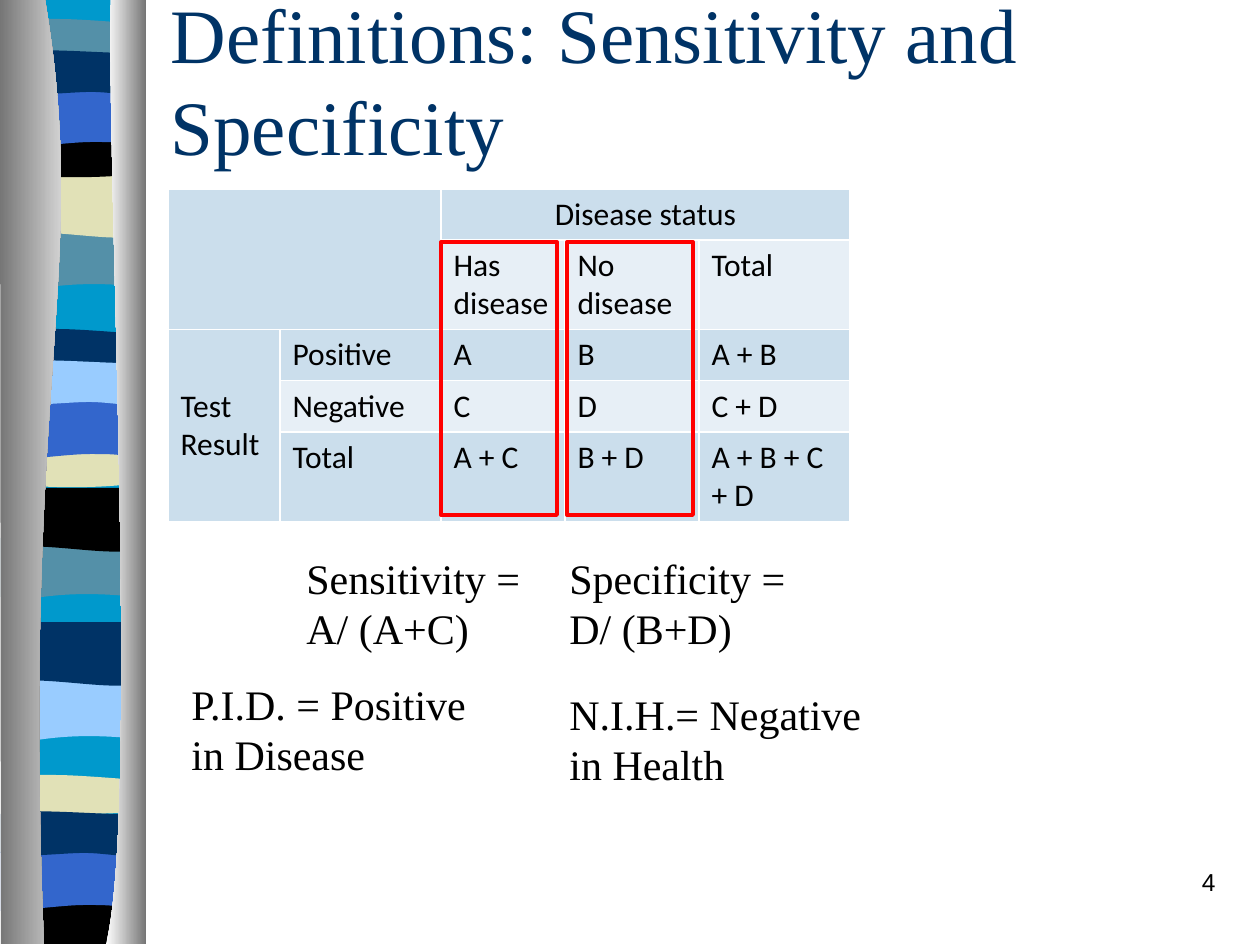
from lxml import etree
from pptx import Presentation
from pptx.dml.color import RGBColor
from pptx.enum.shapes import MSO_SHAPE
from pptx.enum.text import MSO_ANCHOR, MSO_AUTO_SIZE, PP_ALIGN
from pptx.oxml.ns import qn
from pptx.util import Pt

RECT = MSO_SHAPE.RECTANGLE
MIDDLE = MSO_ANCHOR.MIDDLE
LEFT, CENTER, RIGHT = PP_ALIGN.LEFT, PP_ALIGN.CENTER, PP_ALIGN.RIGHT
PX = 914400 / 126
SERIF = "Times New Roman"


def px(*sizes):
    return [round(size * PX) for size in sizes]


def style(para, size, face, color="000000", align=LEFT):
    para.font.size = Pt(size)
    para.font.name = face
    para.font.color.rgb = RGBColor.from_string(color)
    para.alignment = align


prs = Presentation()
prs.slide_width, prs.slide_height = px(1260, 945)
slide = prs.slides.add_slide(prs.slide_layouts[5])
shapes = slide.shapes

# Wave outlines: pairs are straight steps, sixes are Bezier curves.
rise = [(136, 0), (136, 59), (42, 49, 23, 69, 0, 59), (0, 0)]
dip = [(136, 0), (136, 60), (113, 71, 42, 53, 0, 60), (0, 0)]
thin = [(136, 0), (136, 31), (113, 35, 23, 35, 0, 31), (0, 0),
        (9, -6, 29, -5, 52, -5), (74, -5, 118, -1, 136, 0)]
bowl = [(136, 0), (136, 41), (113, 48, 23, 48, 0, 41), (0, 0),
        (83, 6, 107, 0, 136, 0)]
arch = [(136, 0), (136, 59), (116, 53, 107, 53, 84, 53),
        (62, 53, 21, 59, 0, 59), (0, 0)]
roll = [(136, 0), (136, 39), (127, 45, 106, 39, 83, 39),
        (60, 39, 14, 45, 0, 39), (0, 0), (19, -6, 92, 0, 115, 0),
        (138, 0, 133, 0, 136, 0)]
floor = [(136, 0), (136, 47), (1, 47), (0, 0), (83, 6, 107, 0, 136, 0)]
base = [(136, 0), (136, 943), (0, 943), (0, 0)]
drape = [(45, 0), (91, 273, 21, 374, 44, 945), (1, 945), (0, 0)]
fold = [(111, 0), (106, 158, 140, 814, 106, 945), (146, 945), (146, 1)]

# Outline, left, top, one fill colour or two gradient colours
bands = [
    (base, 8, -4, "0099CC"),
    (rise, 8, 228, "5490A8"), (dip, 8, 174, "E1E1B7"),
    (thin, 8, 24, "5490A8"), (bowl, 8, 131, "000000"),
    (arch, 8, 89, "3366CC"), (roll, 8, 53, "003366"),
    (rise, 1, 538, "5490A8"), (dip, 4, 488, "000000"),
    (thin, 6, 334, "003366"), (bowl, 4, 441, "E1E1B7"),
    (arch, 6, 401, "3366CC"), (roll, 6, 363, "99CCFF"),
    (rise, 3, 680, "99CCFF"), (dip, 5, 622, "003366"),
    (thin, 4, 780, "E1E1B7"), (floor, 4, 897, "000000"),
    (arch, 1, 852, "3366CC"), (roll, 1, 814, "003366"),
    (drape, 0, -1, "767676", "FFFFFF"),
    (fold, 0, -1, "FFFFFF", "767676"),
]
for outline, left, top, *colors in bands:
    points = [px(left + step[i], top + step[i + 1])
              for step in outline for i in range(0, len(step), 2)]
    pen = shapes.build_freeform(*points[0], scale=1.0)
    pen.add_line_segments(points[1:], close=True)
    band = pen.convert_to_shape()
    lines = band._element.findall(".//" + qn("a:lnTo"))
    for step in outline[1:]:
        group, lines = lines[:len(step) // 2], lines[len(step) // 2:]
        if len(group) == 3:
            curve = etree.Element(qn("a:cubicBezTo"))
            group[0].addprevious(curve)
            for line in group:
                curve.append(line[0])
                line.getparent().remove(line)
    band.shadow.inherit = False
    band.line.fill.background()
    if len(colors) == 1:
        band.fill.solid()
        band.fill.fore_color.rgb = RGBColor.from_string(colors[0])
    else:
        band.fill.gradient()
        band.fill.gradient_angle = 0
        for stop, color in zip(band.fill.gradient_stops, colors):
            stop.color.rgb = RGBColor.from_string(color)

title = shapes.title
title.left, title.top, title.width, title.height = px(158, 21, 1071, 116)
frame = title.text_frame
frame.text = "Definitions: Sensitivity and Specificity"
frame.auto_size = MSO_AUTO_SIZE.NONE
frame.vertical_anchor = MIDDLE
style(frame.paragraphs[0], 44, SERIF, "003366")

widths = px(112, 161, 124, 134, 151)
heights = px(51, 89, 51, 51, 89)
rows = [
    ["", "", "Disease status", "", ""],
    ["", "", "Has disease", "No disease", "Total"],
    ["Test Result", "Positive", "A", "B", "A + B"],
    ["", "Negative", "C", "D", "C + D"],
    ["", "Total", "A + C", "B + D", "A + B + C + D"],
]
table = shapes.add_table(5, 5, *px(168, 189), sum(widths), sum(heights)).table
table.first_row = False
for col, width in zip(table.columns, widths):
    col.width = width
for row, height in zip(table.rows, heights):
    row.height = height
for r, texts in enumerate(rows):
    for c, text in enumerate(texts):
        cell = table.cell(r, c)
        cell.fill.solid()
        cell.fill.fore_color.rgb = RGBColor.from_string(
            "E7EFF6" if r % 2 else "CBDEEC")
        if text:
            cell.text = text
            style(cell.text_frame.paragraphs[0], 18, "Calibri",
                  align=LEFT if r else CENTER)
for r, c, end, last in [(0, 0, 1, 1), (0, 2, 0, 4), (2, 0, 4, 0)]:
    table.cell(r, c).merge(table.cell(end, last))
table.cell(2, 0).vertical_anchor = MIDDLE

notes = [
    (294, 546, 252, 115, "Sensitivity =\nA/ (A+C)", 24, SERIF, LEFT),
    (557, 546, 242, 115, "Specificity =\nD/ (B+D)", 24, SERIF, LEFT),
    (179, 672, 336, 115, "P.I.D. = Positive in Disease", 24, SERIF, LEFT),
    (557, 682, 336, 115, "N.I.H.= Negative in Health", 24, SERIF, LEFT),
    (966, 861, 262, 63, "4", 14, "Arial", RIGHT),
]
for left, top, width, height, text, size, face, align in notes:
    frame = shapes.add_textbox(*px(left, top, width, height)).text_frame
    frame.word_wrap = True
    frame.text = text
    for para in frame.paragraphs:
        style(para, size, face, align=align)

for left, width in [(441, 116), (567, 126)]:
    box = shapes.add_shape(RECT, *px(left, 242, width, 273))
    box.shadow.inherit = False
    box.fill.background()
    box.line.color.rgb = RGBColor.from_string("FF0000")
    box.line.width = Pt(2.25)

prs.save("out.pptx")
